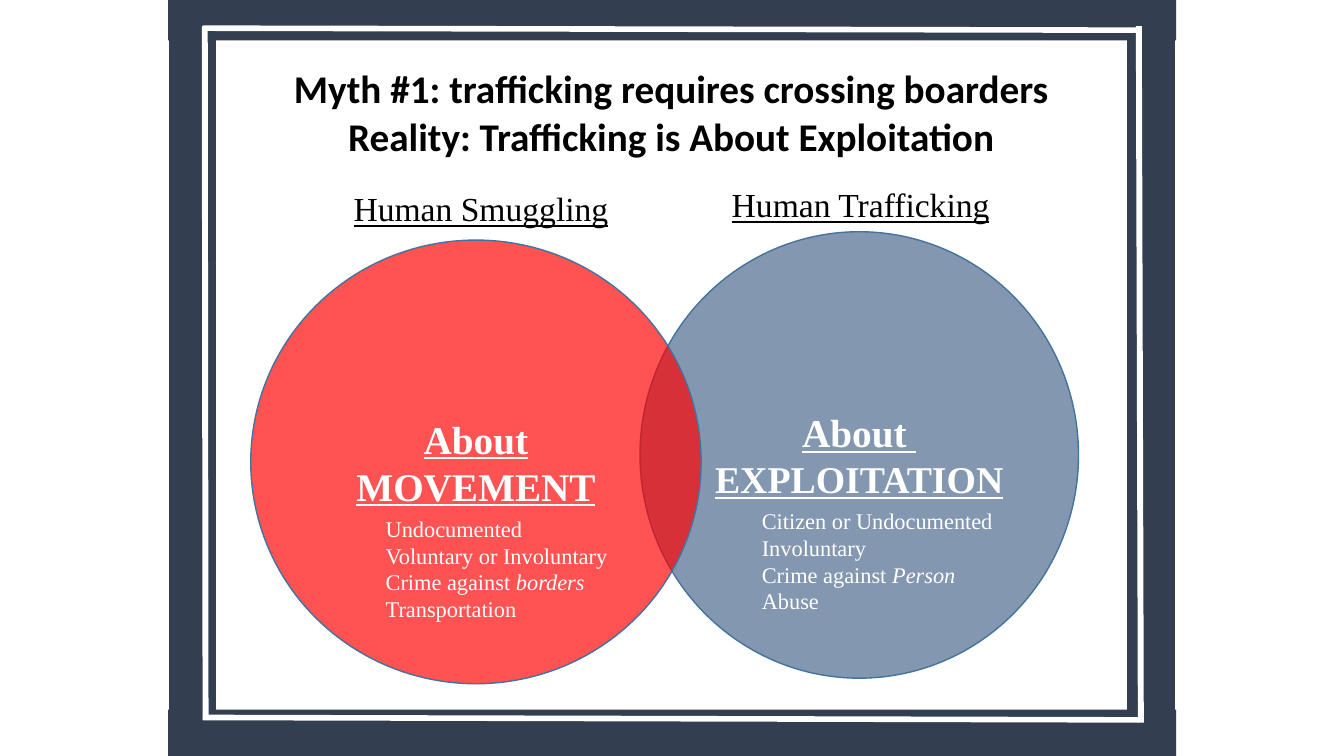
from dataclasses import dataclass

from lxml.etree import SubElement
from pptx import Presentation
from pptx.dml.color import RGBColor
from pptx.enum.shapes import MSO_CONNECTOR, MSO_SHAPE
from pptx.enum.text import MSO_ANCHOR, MSO_AUTO_SIZE, PP_ALIGN
from pptx.oxml.ns import qn
from pptx.util import Cm, Pt


@dataclass(frozen=True)
class Theme:
    navy: RGBColor = RGBColor(0x33, 0x3F, 0x50)
    white: RGBColor = RGBColor(0xFF, 0xFF, 0xFF)
    black: RGBColor = RGBColor(0, 0, 0)
    red: RGBColor = RGBColor(0xFF, 0, 0)
    slate: RGBColor = RGBColor(0x84, 0x97, 0xB0)
    outline: RGBColor = RGBColor(0x43, 0x73, 0x9E)
    sans: str = "Calibri"
    serif: str = "Times New Roman"
    title: int = 28
    heading: int = 28
    long_heading: int = 27
    label: int = 24
    body: int = 16


theme = Theme()


def add_run(p, text, size, color, name=theme.serif, bold=None, italic=None, underline=None):
    r = p.add_run()
    r.text = text
    r.font.name, r.font.size, r.font.color.rgb = name, Pt(size), color
    r.font.bold, r.font.italic, r.font.underline = bold, italic, underline


def add_box(box, wrap=True):
    """Add a text box that grows with its text and return its text frame."""
    tf = s.shapes.add_textbox(*map(Cm, box)).text_frame
    tf.word_wrap = wrap
    tf.auto_size = MSO_AUTO_SIZE.SHAPE_TO_FIT_TEXT
    return tf


prs = Presentation()
prs.slide_width, prs.slide_height = Cm(33.87), Cm(19.05)
s = prs.slides.add_slide(prs.slide_layouts[6])

# Navy frame: top, right, bottom, left
frame_bars = [
    ((4.24, 0, 25.4, 1.02), False),
    ((28.42, 0.69, 1.17, 18.34), True),
    ((4.24, 17.88, 25.4, 1.17), False),
    ((4.27, 0.51, 1.17, 18.52), True),
]
for box, outlined in frame_bars:
    bar = s.shapes.add_shape(MSO_SHAPE.RECTANGLE, *map(Cm, box))
    bar.shadow.inherit = False
    bar.fill.solid()
    bar.fill.fore_color.rgb = theme.navy
    if outlined:
        bar.line.color.rgb = theme.navy
        bar.line.width = Pt(1)
    else:
        bar.line.fill.background()

# White rules inside the frame: left, bottom, right, top
frame_rules = [
    ((5.16, 0.66, 5.18, 18.14), 4.25),
    ((28.7, 18.14, 5.11, 18.08), 4),
    ((28.7, 0.66, 28.75, 18.21), 4.25),
    ((28.75, 0.76, 5.11, 0.71), 4),
]
for ends, width in frame_rules:
    rule = s.shapes.add_connector(MSO_CONNECTOR.STRAIGHT, *map(Cm, ends))
    rule.line.color.rgb = theme.white
    rule.line.width = Pt(width)
    SubElement(rule._element.spPr, qn("a:effectLst"))

# Overlapping circles, the red one see-through
circles = [
    ((16.13, 5.84, 11.05, 11.25), theme.slate, None,
     [("About ", theme.heading), ("EXPLOITATION", theme.long_heading)]),
    ((6.32, 6.05, 11.35, 11.18), theme.red, 68,
     [("About", theme.heading), ("MOVEMENT", theme.heading)]),
]
for box, color, opacity, heading in circles:
    circle = s.shapes.add_shape(MSO_SHAPE.OVAL, *map(Cm, box))
    circle.shadow.inherit = False
    circle.fill.solid()
    circle.fill.fore_color.rgb = color
    if opacity:
        srgb = circle._element.spPr.find(qn("a:solidFill")).find(qn("a:srgbClr"))
        SubElement(srgb, qn("a:alpha"), val=str(opacity * 1000))
    circle.line.color.rgb = theme.outline
    circle.line.width = Pt(1)
    tf = circle.text_frame
    tf.vertical_anchor = MSO_ANCHOR.MIDDLE
    for i, (text, size) in enumerate(heading):
        p = tf.add_paragraph() if i else tf.paragraphs[0]
        p.alignment = PP_ALIGN.CENTER
        add_run(p, text, size, theme.white, bold=True, underline=True)

# Labels above the circles
labels = [
    ((18.19, 4.52, 8.51, 1.27), "Human Trafficking"),
    ((8.66, 4.62, 8.41, 1.27), "Human Smuggling"),
]
for box, text in labels:
    add_run(add_box(box).paragraphs[0], text, theme.label, theme.black, underline=True)

# Traits inside the circles; the second part of a line is in italics
traits = [
    ((8.2, 12.85, 8.81, 3),
     [("Undocumented",), ("Voluntary or Involuntary",),
      ("Crime against ", "borders"), ("Transportation",)]),
    ((17.68, 12.65, 9.25, 3),
     [("Citizen or Undocumented",), ("Involuntary",),
      ("Crime against ", "Person"), ("Abuse",)]),
]
for box, lines in traits:
    tf = add_box(box)
    for i, parts in enumerate(lines):
        p = tf.add_paragraph() if i else tf.paragraphs[0]
        p.level = 1
        pPr = p._p.get_or_add_pPr()
        pPr.set("marL", str(Cm(1.27)))
        pPr.set("indent", "0")
        for j, text in enumerate(parts):
            add_run(p, text, theme.body, theme.white, italic=j == 1)

# Title
tf = add_box((7.16, 1.63, 19.79, 2.54), wrap=False)
myth, reality = tf.paragraphs[0], tf.add_paragraph()
myth.line_spacing = 0.9
reality.alignment = PP_ALIGN.CENTER
add_run(myth, "Myth #1: trafficking requires crossing boarders",
        theme.title, theme.black, theme.sans, bold=True)
add_run(reality, "Reality: Trafficking is About Exploitation",
        theme.title, theme.black, theme.sans, bold=True)

prs.save("out.pptx")
